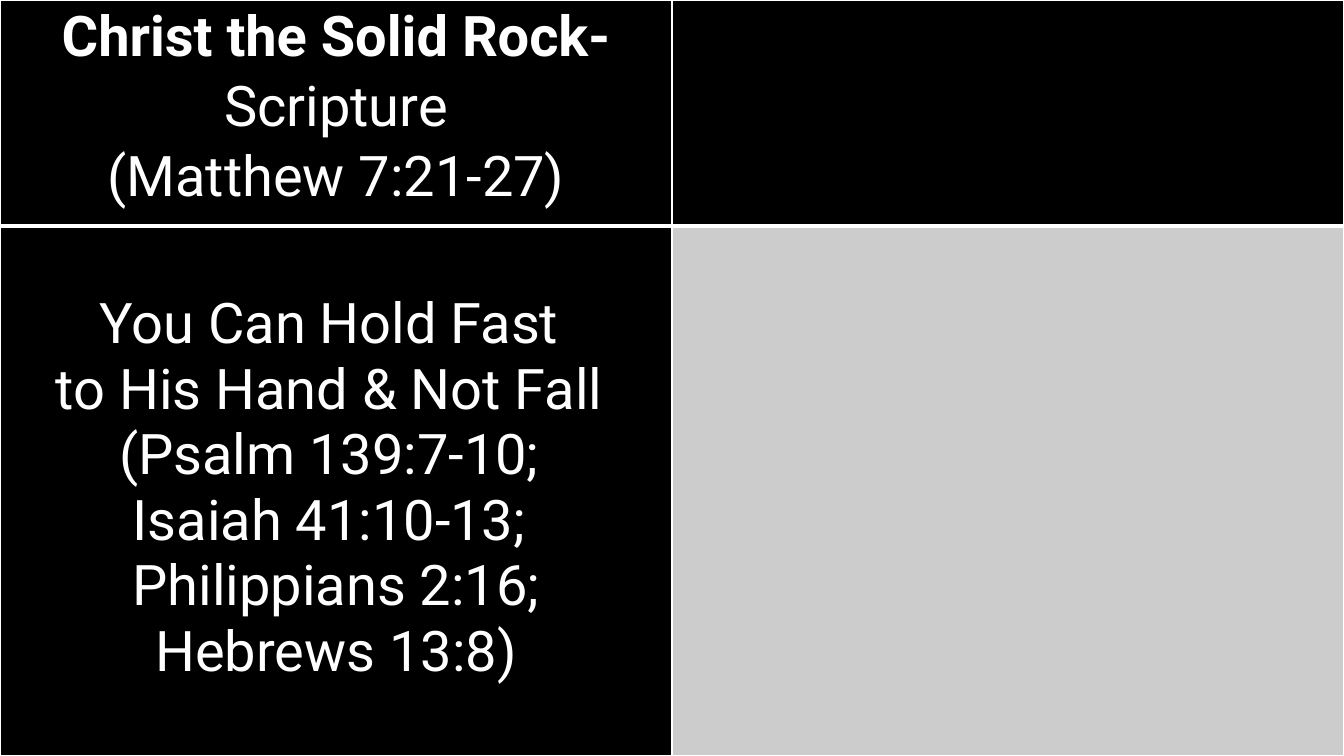
import pptx
import pptx.dml.color
import pptx.enum.text
import pptx.oxml.ns
import pptx.util
from lxml import etree

Pt = pptx.util.Pt

# Content: each paragraph is a list of (text, bold) runs
HEADING = [
    [("Christ the Solid Rock- ", True), ("Scripture", False)],
    [("(Matthew 7:21-27)", False)],
]
LESSON = [
    [(line, False)]
    for line in (
        "You Can Hold Fast ",
        "to His Hand & Not Fall ",
        "(Psalm 139:7-10; ",
        "Isaiah 41:10-13; ",
        "Philippians 2:16;",
        "Hebrews 13:8)",
    )
]
BLACK, WHITE, GREY = "000000", "FFFFFF", "CCCCCC"

# Grid: rows of (paragraphs, fill, line spacing, top margin)
GRID = [
    [(HEADING, BLACK, 1.07, 0), ([], BLACK, 1, 0)],
    [(LESSON, BLACK, 1, 47), ([], GREY, 1, 0)],
]
WIDTH, HEIGHT = 960, 540
ROW_HEIGHTS = [161.5, 378.5]
THIN, THICK = 1, 3


def color(value):
    return pptx.dml.color.RGBColor.from_string(value)


def write(frame, paragraphs, size=40, font="Roboto", fill=WHITE, spacing=1):
    for index, runs in enumerate(paragraphs):
        paragraph = frame.paragraphs[0] if index == 0 else frame.add_paragraph()
        paragraph.alignment = pptx.enum.text.PP_ALIGN.CENTER
        paragraph.line_spacing = spacing
        for text, bold in runs:
            run = paragraph.add_run()
            run.text = text
            run.font.size = Pt(size)
            run.font.name = font
            run.font.bold = bold
            run.font.color.rgb = color(fill)


def set_borders(cell, widths):
    properties = cell._tc.get_or_add_tcPr()
    qn = pptx.oxml.ns.qn
    for side, width in widths.items():
        line = etree.SubElement(properties, qn(f"a:ln{side}"), w=str(Pt(width)))
        solid = etree.SubElement(line, qn("a:solidFill"))
        etree.SubElement(solid, qn("a:srgbClr"), val=WHITE)


def main():
    deck = pptx.Presentation()
    deck.slide_width, deck.slide_height = Pt(WIDTH), Pt(HEIGHT)
    slide = deck.slides.add_slide(deck.slide_layouts[6])
    slide.background.fill.solid()
    slide.background.fill.fore_color.rgb = color(BLACK)

    # Full-slide table with two equal columns
    table = slide.shapes.add_table(
        len(GRID), len(GRID[0]), 0, 0, Pt(WIDTH), Pt(HEIGHT)
    ).table
    table.first_row = table.horz_banding = False
    for row, height in zip(table.rows, ROW_HEIGHTS):
        row.height = Pt(height)

    # Cells, with a thick rule between the rows
    for r, row in enumerate(GRID):
        for c, (paragraphs, fill, spacing, top) in enumerate(row):
            cell = table.cell(r, c)
            cell.margin_left = cell.margin_right = Pt(5)
            cell.margin_top, cell.margin_bottom = Pt(top), 0
            set_borders(cell, {
                "L": THIN,
                "R": THIN,
                "T": THICK if r > 0 else THIN,
                "B": THICK if r < len(GRID) - 1 else THIN,
            })
            cell.fill.solid()
            cell.fill.fore_color.rgb = color(fill)
            write(cell.text_frame, paragraphs, spacing=spacing)

    deck.save("out.pptx")


if __name__ == "__main__":
    main()
